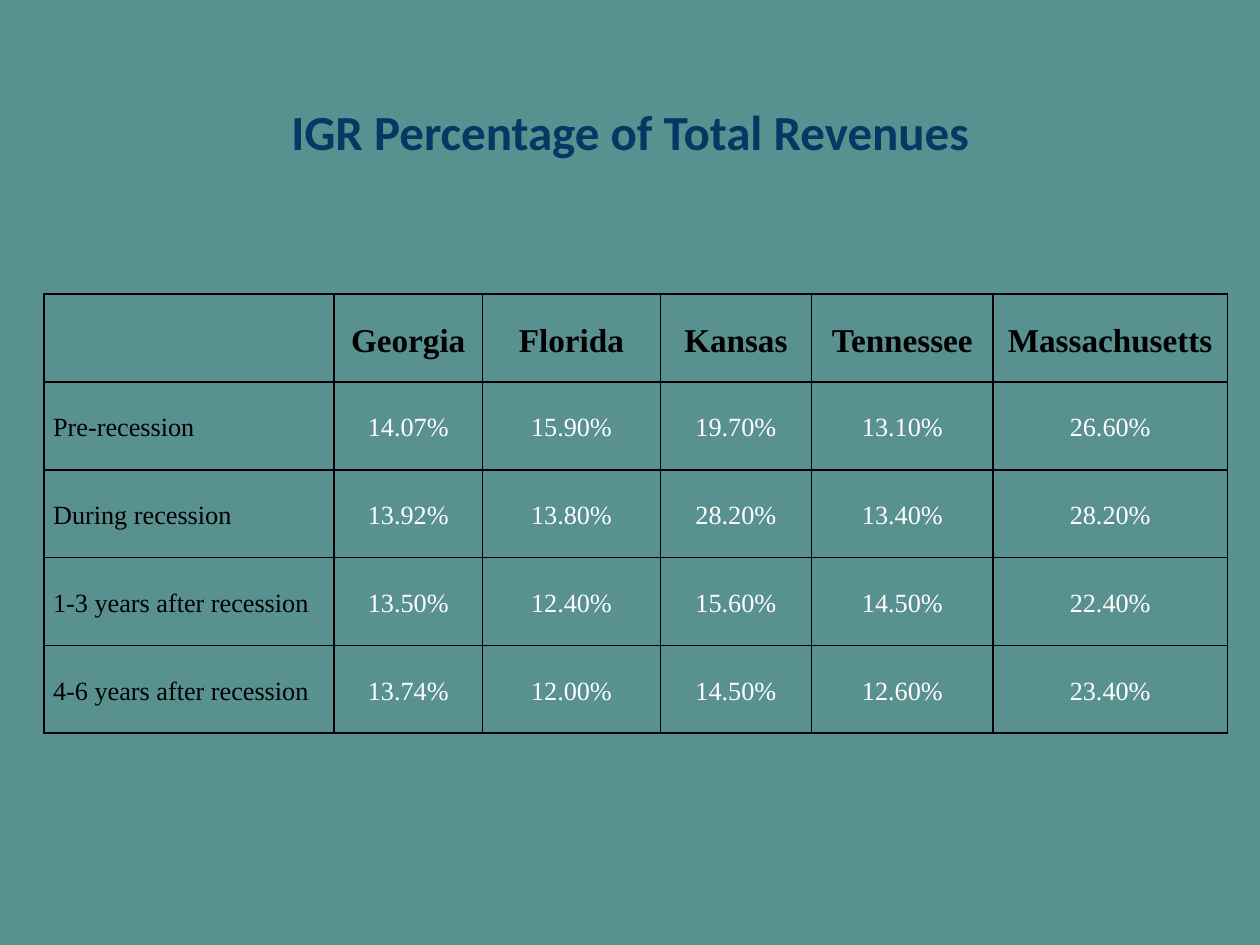
import lxml.etree
import pptx
import pptx.dml.color
import pptx.enum.text
import pptx.oxml.ns
import pptx.util
from pptx.util import Cm, Pt

BACKGROUND, NAVY, BLACK, WHITE = "599191", "073763", "000000", "FFFFFF"
COLUMN_WIDTHS = [5.84, 3, 3.58, 3.05, 3.66, 4.72]
ROW_HEIGHT = 1.77
REVENUE_SHARES = [
    ["", "Georgia", "Florida", "Kansas", "Tennessee", "Massachusetts"],
    ["Pre-recession", "14.07%", "15.90%", "19.70%", "13.10%", "26.60%"],
    ["During recession", "13.92%", "13.80%", "28.20%", "13.40%", "28.20%"],
    ["1-3 years after recession", "13.50%", "12.40%", "15.60%", "14.50%", "22.40%"],
    ["4-6 years after recession", "13.74%", "12.00%", "14.50%", "12.60%", "23.40%"],
]


def rgb(color):
    """Return the colour for a hex string."""
    return pptx.dml.color.RGBColor.from_string(color)


def style_paragraph(paragraph, font_name, size, color, bold, centered):
    """Set the font and alignment of one paragraph."""
    align = pptx.enum.text.PP_ALIGN
    paragraph.alignment = align.CENTER if centered else align.LEFT
    font = paragraph.font
    font.name, font.size, font.bold = font_name, Pt(size), bold
    font.color.rgb = rgb(color)


def add_title(slide, text):
    """Place and format the slide title."""
    title = slide.shapes.title
    title.left, title.top, title.width, title.height = Cm(1.27), Cm(1.6), Cm(22.86), Cm(2.06)
    title.text_frame.text = text
    title.text_frame.vertical_anchor = pptx.enum.text.MSO_ANCHOR.MIDDLE
    style_paragraph(title.text_frame.paragraphs[0], "Calibri", 28, NAVY, True, True)


def add_borders(cell, color, width):
    """Draw a solid line on all four sides of a cell."""
    properties = cell._tc.get_or_add_tcPr()
    qn = pptx.oxml.ns.qn
    for side in ("a:lnL", "a:lnR", "a:lnT", "a:lnB"):
        line = lxml.etree.SubElement(properties, qn(side), w=str(Pt(width)))
        fill = lxml.etree.SubElement(line, qn("a:solidFill"))
        lxml.etree.SubElement(fill, qn("a:srgbClr"), val=color)


def format_cell(cell, text, is_header, is_label):
    """Fill one cell with text in the style of its role."""
    cell.text = text
    cell.vertical_anchor = pptx.enum.text.MSO_ANCHOR.MIDDLE
    cell.margin_left = cell.margin_right = Cm(0.18)
    cell.margin_top = cell.margin_bottom = Cm(0)
    add_borders(cell, BLACK, 1)
    cell.fill.background()
    paragraph = cell.text_frame.paragraphs[0]
    paragraph.line_spacing = 1.15
    style_paragraph(paragraph, "Times New Roman", 19 if is_header else 15,
                    BLACK if is_header or is_label else WHITE, is_header, not is_label)


def add_revenue_table(slide, rows):
    """Add the table of revenue shares by state and period."""
    frame = slide.shapes.add_table(len(rows), len(COLUMN_WIDTHS), Cm(0.89), Cm(5.93),
                                   Cm(sum(COLUMN_WIDTHS)), Cm(ROW_HEIGHT * len(rows)))
    table = frame.table
    table.horz_banding = False
    for column, width in zip(table.columns, COLUMN_WIDTHS):
        column.width = Cm(width)
    for row_index, row in enumerate(rows):
        table.rows[row_index].height = Cm(ROW_HEIGHT)
        for column_index, text in enumerate(row):
            format_cell(table.cell(row_index, column_index), text,
                        row_index == 0, column_index == 0)


def main():
    """Build and save the slide."""
    presentation = pptx.Presentation()
    presentation.slide_width, presentation.slide_height = Cm(25.4), Cm(19.05)
    slide = presentation.slides.add_slide(presentation.slide_layouts[5])
    slide.background.fill.solid()
    slide.background.fill.fore_color.rgb = rgb(BACKGROUND)
    add_title(slide, "IGR Percentage of Total Revenues")
    add_revenue_table(slide, REVENUE_SHARES)
    presentation.save("out.pptx")


if __name__ == "__main__":
    main()
